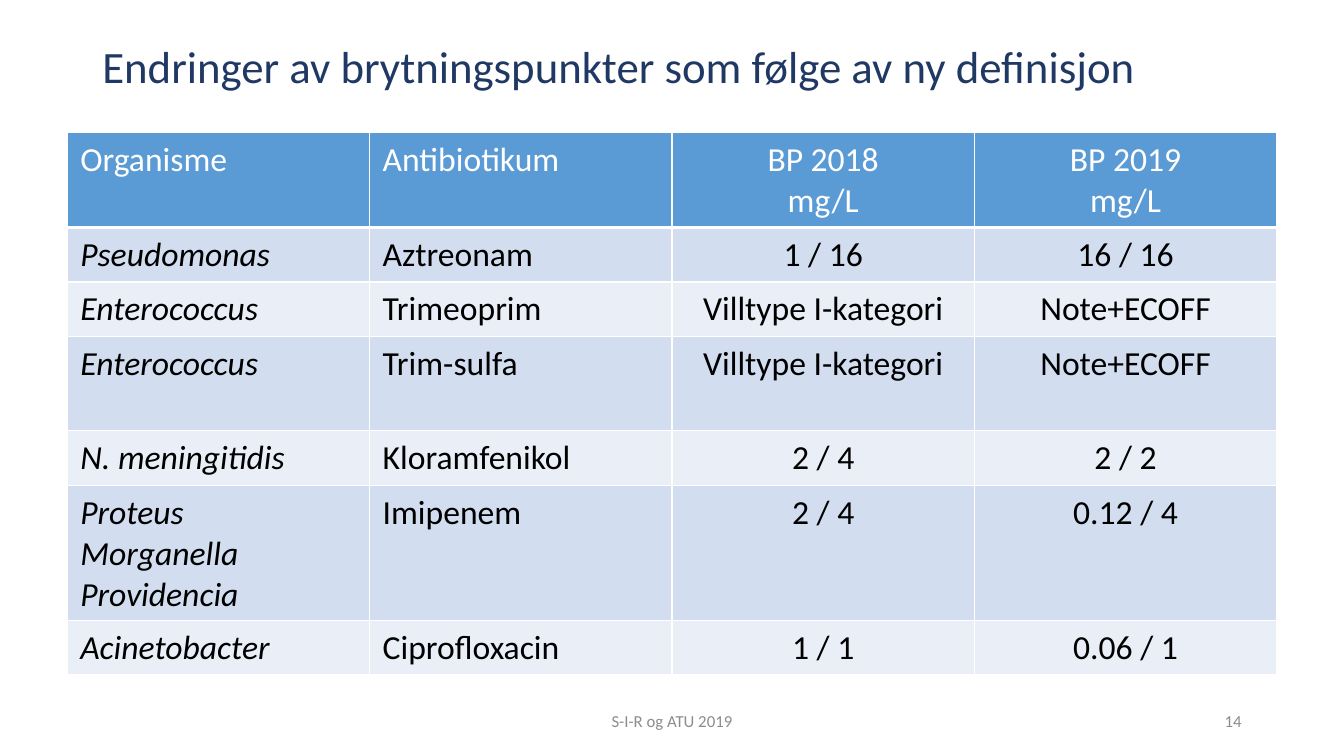
from lxml.etree import SubElement
from pptx import Presentation
from pptx.dml.color import RGBColor
from pptx.enum.text import MSO_ANCHOR as ANCHOR, PP_ALIGN as ALIGN
from pptx.oxml.ns import qn
from pptx.util import Inches, Pt

COLS, ROWS = 160, 90
NAVY, BLUE, GRAY = "203864", "5B9BD5", "8C8C8C"
WHITE, BLACK = "FFFFFF", "000000"
BANDS = ["D2DEEF", "EAEFF7"]

HEADER = ["Organisme", "Antibiotikum", "BP 2018\nmg/L", "BP 2019\nmg/L"]
BREAKPOINTS = [
    ["Pseudomonas", "Aztreonam", "1 / 16", "16 / 16"],
    ["Enterococcus", "Trimeoprim", "Villtype I-kategori", "Note+ECOFF"],
    ["Enterococcus", "Trim-sulfa", "Villtype I-kategori", "Note+ECOFF"],
    ["N. meningitidis", "Kloramfenikol", "2 / 4", "2 / 2"],
    ["Proteus\nMorganella\nProvidencia", "Imipenem", "2 / 4", "0.12 / 4"],
    ["Acinetobacter", "Ciprofloxacin", "1 / 1", "0.06 / 1"],
]
ONE_LINE, TWO_LINES, THREE_LINES = 6.5, 11.2, 16
ROW_HEIGHTS = [TWO_LINES, ONE_LINE, ONE_LINE, TWO_LINES,
               ONE_LINE, THREE_LINES, ONE_LINE]


def rgb(color):
    return RGBColor.from_string(color)


def set_attrs(obj, values):
    for name, value in values.items():
        setattr(obj, name, value)


class SlideBuilder:
    """Places elements on a grid of COLS by ROWS over the slide."""

    font = "Calibri"
    cell_margins = {"margin_left": Inches(0.13), "margin_right": Inches(0.13),
                    "margin_top": Inches(0.07), "margin_bottom": Inches(0.07)}

    def __init__(self, prs):
        self.col = prs.slide_width / COLS
        self.row = prs.slide_height / ROWS
        self.s = prs.slides.add_slide(prs.slide_layouts[6])

    def box(self, x, y, w, h):
        return (round(x * self.col), round(y * self.row),
                round(w * self.col), round(h * self.row))

    def paragraph(self, p, text, size, color, italic=False, **layout):
        p.text = text
        set_attrs(p, layout)
        for r in p.runs:
            set_attrs(r.font, {"name": self.font, "size": Pt(size),
                               "bold": False, "italic": italic})
            r.font.color.rgb = rgb(color)

    def text(self, place, text, size, color, anchor=ANCHOR.TOP, **layout):
        tf = self.s.shapes.add_textbox(*self.box(*place)).text_frame
        set_attrs(tf, {"word_wrap": True, "vertical_anchor": anchor})
        self.paragraph(tf.paragraphs[0], text, size, color, **layout)

    def borders(self, cell, bottom):
        tc_pr = cell._tc.get_or_add_tcPr()
        for side, width in zip("LRTB", (1, 1, 1, bottom)):
            ln = SubElement(tc_pr, qn(f"a:ln{side}"), w=str(Pt(width)))
            fill = SubElement(ln, qn("a:solidFill"))
            SubElement(fill, qn("a:srgbClr"), val=WHITE)

    def cell(self, cell, text, fill, color, bottom=1, **style):
        set_attrs(cell, self.cell_margins)
        self.borders(cell, bottom)
        cell.fill.solid()
        cell.fill.fore_color.rgb = rgb(fill)
        self.paragraph(cell.text_frame.paragraphs[0], text, 24, color, **style)

    def table(self, x, y, w, header, body, heights):
        """Italic first column, centred third and later columns."""
        place = self.box(x, y, w, sum(heights))
        table = self.s.shapes.add_table(len(heights), len(header), *place).table
        set_attrs(table, {"first_row": False, "horz_banding": False})
        for row, height in zip(table.rows, heights):
            row.height = round(height * self.row)
        for i, values in enumerate([header] + body):
            for j, value in enumerate(values):
                align = ALIGN.CENTER if j > 1 else ALIGN.LEFT
                if i == 0:
                    look = {"fill": BLUE, "color": WHITE, "bottom": 3}
                else:
                    look = {"fill": BANDS[(i - 1) % 2], "color": BLACK,
                            "italic": j == 0}
                self.cell(table.cell(i, j), value, alignment=align, **look)


def main():
    prs = Presentation()
    set_attrs(prs, {"slide_width": Inches(13.33), "slide_height": Inches(7.5)})
    sb = SlideBuilder(prs)
    sb.text((11, 4.8, 138, 11), "Endringer av brytningspunkter som følge av ny definisjon",
            32, NAVY, line_spacing=0.9)
    sb.table(8, 15.8, 144, HEADER, BREAKPOINTS, ROW_HEIGHTS)
    sb.text((53, 83.4, 54, 4.8), "S-I-R og ATU 2019", 12, GRAY,
            anchor=ANCHOR.MIDDLE, alignment=ALIGN.CENTER)
    sb.text((113, 83.4, 36, 4.8), "14", 12, GRAY,
            anchor=ANCHOR.MIDDLE, alignment=ALIGN.RIGHT)
    prs.save("out.pptx")


if __name__ == "__main__":
    main()
